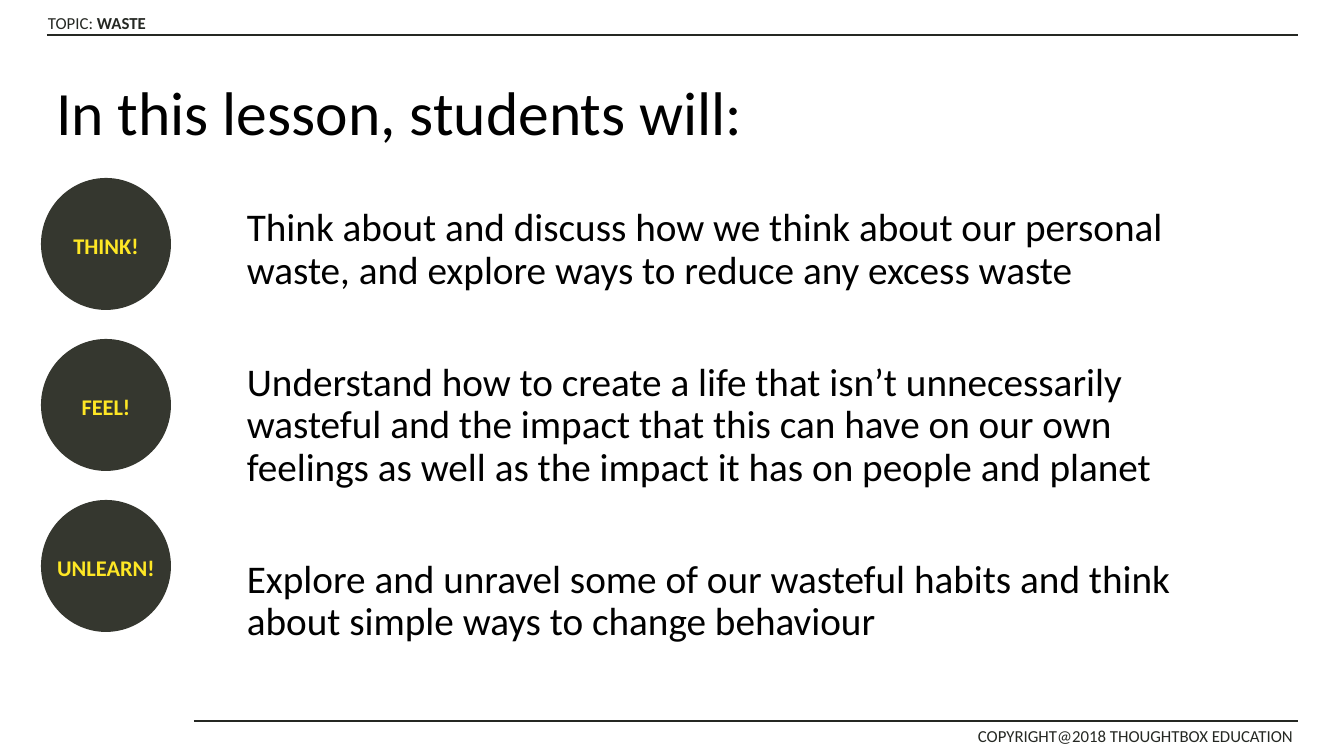
from pptx import Presentation
from pptx import util as u
from pptx.dml.color import RGBColor
from pptx.enum import shapes, text
from pptx.oxml.ns import qn
from lxml import etree

TITLE = "In this lesson, students will:"
TOPIC = [("TOPIC: ", False), ("WASTE", True)]
COPYRIGHT = [("COPYRIGHT@2018 THOUGHTBOX EDUCATION", False)]
STAGES = ["THINK!", "FEEL!", "UNLEARN!"]
AIMS = [
    "Think about and discuss how we think about our personal waste, "
    "and explore ways to reduce any excess waste",
    "Understand how to create a life that isn’t unnecessarily wasteful and the impact "
    "that this can have on our own feelings as well as the impact it has on people and planet",
    "Explore and unravel some of our wasteful habits and think about simple ways "
    "to change behaviour",
]
RULES = [(47, 35), (194, 721)]
RULE_END = 1298
STAGE_LEFT, STAGE_TOP, STAGE_STEP = 41, 178, 161
STAGE_WIDTH, STAGE_HEIGHT = 130, 132

BLACK = RGBColor(0x00, 0x00, 0x00)
INK = RGBColor(0x25, 0x28, 0x23)
DARK = RGBColor(0x35, 0x37, 0x2F)
YELLOW = RGBColor(0xFE, 0xE7, 0x25)


def px(*lengths):
    """Turn pixel lengths into EMU."""
    return [u.Emu(round(n * 914400 / 100.8)) for n in lengths]


def style(paragraph, size, color):
    """Set the font of a whole paragraph."""
    font = paragraph.font
    font.name, font.size, font.color.rgb = "Calibri", u.Pt(size), color


def add_label(slide, box, parts, wrap):
    """Add a small header or footer text made of plain and bold parts."""
    frame = slide.shapes.add_textbox(*px(*box)).text_frame
    frame.word_wrap = wrap
    paragraph = frame.paragraphs[0]
    for words, bold in parts:
        run = paragraph.add_run()
        run.text = words
        if bold:
            run.font.bold = True
    style(paragraph, 12, INK)


def add_rule(slide, left, y):
    """Add a thin horizontal line ending at the right margin."""
    rule = slide.shapes.add_connector(shapes.MSO_CONNECTOR.STRAIGHT, *px(left, y, RULE_END, y))
    rule.line.color.rgb, rule.line.width = INK, u.Pt(1)
    etree.SubElement(rule._element.spPr, qn("a:effectLst"))


def add_stage(slide, index, name):
    """Add one round stage badge of the left column."""
    top = STAGE_TOP + index * STAGE_STEP
    badge = slide.shapes.add_shape(
        shapes.MSO_SHAPE.OVAL, *px(STAGE_LEFT, top, STAGE_WIDTH, STAGE_HEIGHT))
    badge.shadow.inherit = False
    badge.fill.solid()
    badge.fill.fore_color.rgb = DARK
    badge.line.fill.background()
    frame = badge.text_frame
    frame.word_wrap = False
    frame.vertical_anchor = text.MSO_ANCHOR.MIDDLE
    frame.text = name
    paragraph = frame.paragraphs[0]
    paragraph.alignment = text.PP_ALIGN.CENTER
    paragraph.line_spacing = 1.15
    paragraph.space_after = u.Pt(10)
    style(paragraph, 16, YELLOW)
    paragraph.font.bold = True


def add_title(slide):
    """Place and format the slide title."""
    title = slide.shapes.title
    title.left, title.top, title.width, title.height = px(46, 50, 1252, 131)
    frame = title.text_frame
    frame.text = TITLE
    frame.vertical_anchor = text.MSO_ANCHOR.MIDDLE
    paragraph = frame.paragraphs[0]
    paragraph.alignment = text.PP_ALIGN.LEFT
    paragraph.line_spacing = 0.9
    style(paragraph, 44, BLACK)


def add_aims(slide):
    """Add the lesson aims as spaced paragraphs."""
    frame = slide.shapes.add_textbox(*px(237, 203, 1015, 480)).text_frame
    frame.word_wrap = True
    frame.text = "\n".join(AIMS)
    for index, paragraph in enumerate(frame.paragraphs):
        paragraph.line_spacing = 0.9
        if index:
            paragraph.space_before = u.Pt(50)
        style(paragraph, 28, BLACK)


def main():
    """Build and save the slide."""
    deck = Presentation()
    deck.slide_width, deck.slide_height = px(1344, 756)
    slide = deck.slides.add_slide(deck.slide_layouts[5])
    add_label(slide, (38, 8, 124, 30), TOPIC, False)
    add_label(slide, (968, 721, 343, 31), COPYRIGHT, True)
    for left, y in RULES:
        add_rule(slide, left, y)
    add_title(slide)
    for index, name in enumerate(STAGES):
        add_stage(slide, index, name)
    add_aims(slide)
    deck.save("out.pptx")


if __name__ == "__main__":
    main()
